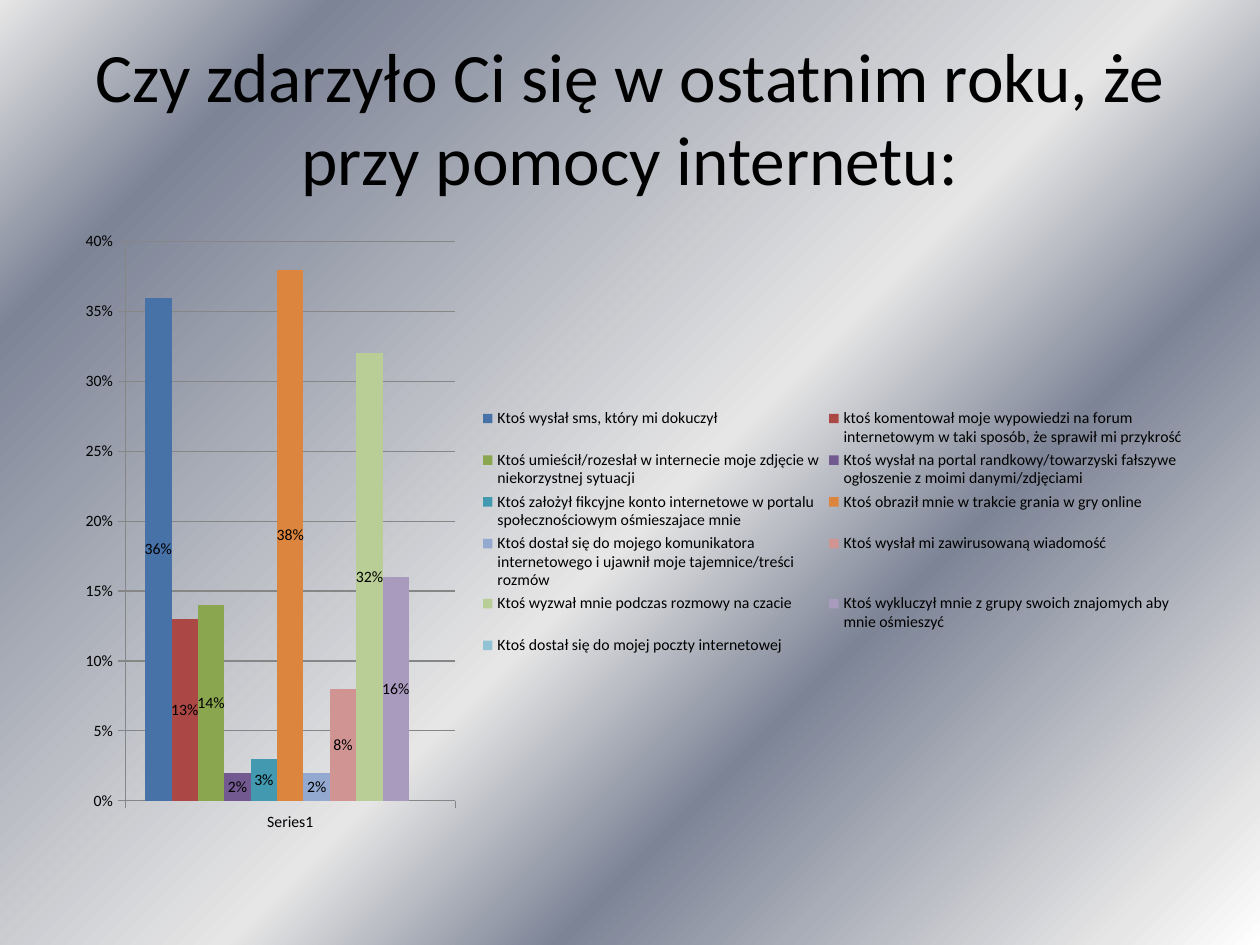
from lxml import etree
from pptx import Presentation, util as u
from pptx.chart.data import CategoryChartData
from pptx.dml.color import RGBColor
from pptx.enum import chart as kinds, text
from pptx.oxml.ns import qn

PX = 914400 // 126


def color(value):
    return RGBColor.from_string(value)


answers = [
    ("Ktoś wysłał sms, który mi dokuczył", 0.36, "4672A8"),
    ("ktoś komentował moje wypowiedzi na forum internetowym w taki sposób, że sprawił mi przykrość", 0.13, "AB4744"),
    ("Ktoś umieścił/rozesłał w internecie moje zdjęcie w niekorzystnej sytuacji", 0.14, "8AA64F"),
    ("Ktoś wysłał na portal randkowy/towarzyski fałszywe ogłoszenie z moimi danymi/zdjęciami", 0.02, "725990"),
    ("Ktoś założył fikcyjne konto internetowe w portalu społecznościowym ośmieszajace mnie", 0.03, "4299B0"),
    ("Ktoś obraził mnie w trakcie grania w gry online", 0.38, "DC853E"),
    ("Ktoś dostał się do mojego komunikatora internetowego i ujawnił moje tajemnice/treści rozmów", 0.02, "93A9D0"),
    ("Ktoś wysłał mi zawirusowaną wiadomość", 0.08, "D09493"),
    ("Ktoś wyzwał mnie podczas rozmowy na czacie", 0.32, "B9CD96"),
    ("Ktoś wykluczył mnie z grupy swoich znajomych aby mnie ośmieszyć", 0.16, "A99BBE"),
    ("Ktoś dostał się do mojej poczty internetowej", None, "91C3D5"),
]

deck = Presentation()
deck.slide_width, deck.slide_height = u.Inches(10), u.Inches(7.5)
page = deck.slides.add_slide(deck.slide_layouts[5])

page.background.fill.gradient()
gradient = page.background._cSld.find(".//" + qn("a:gradFill"))
for child in list(gradient):
    gradient.remove(child)
stops = etree.SubElement(gradient, qn("a:gsLst"))
for percent, shade in [(0, "FFFFFF"), (7, "E6E6E6"), (32, "7D8496"),
                       (47, "E6E6E6"), (85, "7D8496"), (100, "E6E6E6")]:
    stop = etree.SubElement(stops, qn("a:gs"), pos=str(percent * 1000))
    etree.SubElement(stop, qn("a:srgbClr"), val=shade)
etree.SubElement(gradient, qn("a:lin"), ang=str(225 * 60000), scaled="0")

title = page.shapes.title
for name, value in {"left": 63, "top": 37, "width": 1134, "height": 158}.items():
    setattr(title, name, value * PX)
frame = title.text_frame
frame.text = "Czy zdarzyło Ci się w ostatnim roku, że przy pomocy internetu:"
for name, value in {"word_wrap": True, "auto_size": text.MSO_AUTO_SIZE.NONE,
                    "vertical_anchor": text.MSO_ANCHOR.MIDDLE}.items():
    setattr(frame, name, value)
para = frame.paragraphs[0]
para.alignment = text.PP_ALIGN.CENTER
span = para.runs[0]
span.font.name, span.font.size = "Calibri", u.Pt(39.6)
span.font.color.rgb = color("000000")

data = CategoryChartData(number_format="0%")
data.categories = ["Series1"]
for name, share, shade in answers:
    data.add_series(name, [share])
chart = page.shapes.add_chart(
    kinds.XL_CHART_TYPE.COLUMN_CLUSTERED,
    63 * PX, 220 * PX, 1134 * PX, 624 * PX, data).chart
chart.has_title = False
chart.font.name, chart.font.size = "Calibri", u.Pt(9)
chart.font.color.rgb = color("000000")

plot = chart.plots[0]
for name, value in {"gap_width": 150, "overlap": 0, "vary_by_categories": False}.items():
    setattr(plot, name, value)
for series, (name, share, shade) in zip(plot.series, answers):
    series.format.fill.solid()
    series.format.fill.fore_color.rgb = color(shade)
    labels = series.data_labels
    for key, value in {"show_value": True, "number_format": "0%",
                       "number_format_is_linked": False,
                       "position": kinds.XL_LABEL_POSITION.CENTER}.items():
        setattr(labels, key, value)

scale = chart.value_axis
for name, value in {"minimum_scale": 0, "maximum_scale": 0.4, "major_unit": 0.05,
                    "has_major_gridlines": True}.items():
    setattr(scale, name, value)
scale.tick_labels.number_format = "0%"
scale.tick_labels.number_format_is_linked = False
for axis in (scale, chart.category_axis):
    axis.major_tick_mark = kinds.XL_TICK_MARK.OUTSIDE
for line in (scale.format.line, chart.category_axis.format.line,
             scale.major_gridlines.format.line):
    line.color.rgb = color("868686")
    line.width = u.Pt(0.75)

chart.has_legend = True
chart.legend.position = kinds.XL_LEGEND_POSITION.RIGHT
chart.legend.include_in_layout = False

deck.save("out.pptx")
